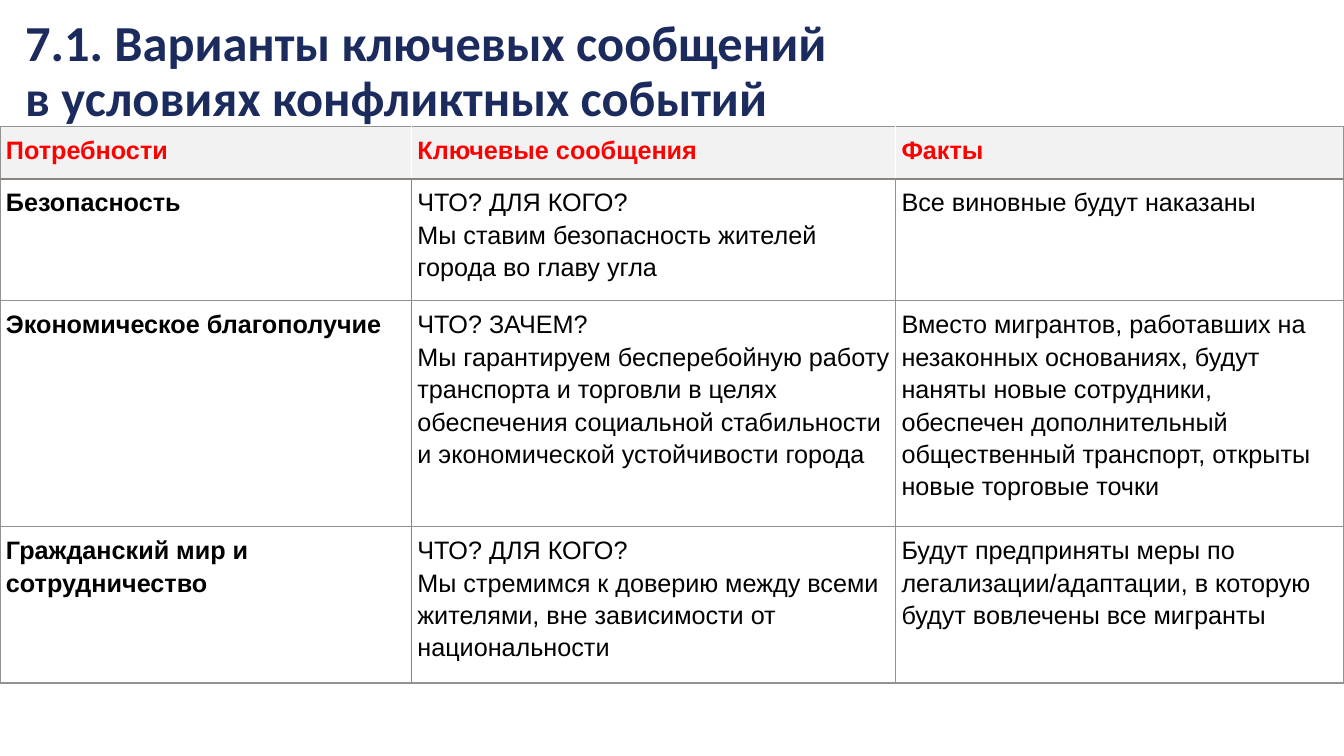
from lxml.etree import SubElement
from pptx import Presentation
from pptx.dml.color import RGBColor
from pptx.enum.text import MSO_ANCHOR, MSO_AUTO_SIZE, PP_ALIGN
from pptx.oxml.ns import qn
from pptx.util import Cm, Pt

NAVY, RED, BLACK, WHITE = "1B2B5D", "FF0000", "000000", "FFFFFF"
HEADER_FILL, GRAY, WARM_GRAY = "F2F2F2", "929292", "89847F"

COLUMN_WIDTHS = [10.37, 12.2, 11.29]
ROW_HEIGHTS = [1.32, 3.07, 5.69, 3.94]
MESSAGES = [
    ["Потребности", "Ключевые сообщения", "Факты"],
    ["Безопасность",
     "ЧТО? ДЛЯ КОГО?\nМы ставим безопасность жителей города во главу угла",
     "Все виновные будут наказаны"],
    ["Экономическое благополучие",
     "ЧТО? ЗАЧЕМ?\nМы гарантируем бесперебойную работу транспорта и торговли "
     "в целях обеспечения социальной стабильности и экономической "
     "устойчивости города",
     "Вместо мигрантов, работавших на незаконных основаниях, будут наняты "
     "новые сотрудники, обеспечен дополнительный общественный транспорт, "
     "открыты новые торговые точки"],
    ["Гражданский мир и сотрудничество",
     "ЧТО? ДЛЯ КОГО?\nМы стремимся к доверию между всеми жителями, "
     "вне зависимости от национальности",
     "Будут предприняты меры по легализации/адаптации, в которую будут "
     "вовлечены все мигранты"],
]


def color(value):
    return RGBColor.from_string(value)


def write(paragraph, text, font="Arial", size=18, fill=BLACK, bold=False,
          line_spacing=1.15, space_after=0):
    """Fill one paragraph; a newline in the text becomes a line break."""
    paragraph.text = text
    paragraph.alignment = PP_ALIGN.LEFT
    paragraph.line_spacing = line_spacing
    paragraph.space_before = Pt(0)
    paragraph.space_after = Pt(space_after)
    for run in paragraph.runs:
        run.font.name = font
        run.font.size = Pt(size)
        run.font.bold = bold
        run.font.color.rgb = color(fill)


def add_title(slide, text):
    title = slide.shapes.title
    title.left, title.top = Cm(0.38), Cm(0.33)
    title.width, title.height = Cm(31.17), Cm(1.85)
    frame = title.text_frame
    frame.word_wrap = True
    frame.auto_size = MSO_AUTO_SIZE.NONE
    frame.vertical_anchor = MSO_ANCHOR.TOP
    write(frame.paragraphs[0], text, font="Calibri", size=36, fill=NAVY,
          bold=True, line_spacing=0.9)


def set_borders(cell, **sides):
    """Draw 1 pt borders; sides are given in the order L, R, T, B."""
    properties = cell._tc.get_or_add_tcPr()
    for side, value in sides.items():
        line = SubElement(properties, qn(f"a:ln{side}"), w=str(Pt(1)))
        solid = SubElement(line, qn("a:solidFill"))
        SubElement(solid, qn("a:srgbClr"), val=value)


def format_cell(cell, text, row, column):
    header = row == 0
    # Rules: white between headings, warm gray under them and after column one
    dividers = [GRAY, WHITE, WHITE, GRAY] if header else [GRAY, WARM_GRAY, GRAY, GRAY]
    set_borders(cell, L=dividers[column], R=dividers[column + 1],
                T=WARM_GRAY if row == 1 else GRAY,
                B=WARM_GRAY if header else GRAY)
    if header:
        cell.fill.solid()
        cell.fill.fore_color.rgb = color(HEADER_FILL)
    else:
        cell.fill.background()
    cell.margin_left = cell.margin_right = Cm(0.15)
    cell.margin_top = cell.margin_bottom = Cm(0.15)
    cell.vertical_anchor = MSO_ANCHOR.TOP

    frame = cell.text_frame
    for index, line in enumerate(text.split("\n")):
        paragraph = frame.add_paragraph() if index else frame.paragraphs[0]
        write(paragraph, line, fill=RED if header else BLACK,
              bold=header or column == 0, space_after=10 if header else 0)


def add_message_table(slide):
    table = slide.shapes.add_table(
        len(ROW_HEIGHTS), len(COLUMN_WIDTHS), Cm(0), Cm(3.19),
        Cm(sum(COLUMN_WIDTHS)), Cm(sum(ROW_HEIGHTS))).table
    table.first_row = table.horz_banding = False
    for column, width in zip(table.columns, COLUMN_WIDTHS):
        column.width = Cm(width)
    for row, height in zip(table.rows, ROW_HEIGHTS):
        row.height = Cm(height)
    for row, texts in enumerate(MESSAGES):
        for column, text in enumerate(texts):
            format_cell(table.cell(row, column), text, row, column)


def main():
    presentation = Presentation()
    presentation.slide_width, presentation.slide_height = Cm(33.87), Cm(19.05)
    slide = presentation.slides.add_slide(presentation.slide_layouts[5])

    # Heading
    add_title(slide, "7.1. Варианты ключевых сообщений\n"
                     "в условиях конфликтных событий")
    # Needs, key messages and facts
    add_message_table(slide)

    presentation.save("out.pptx")


if __name__ == "__main__":
    main()
